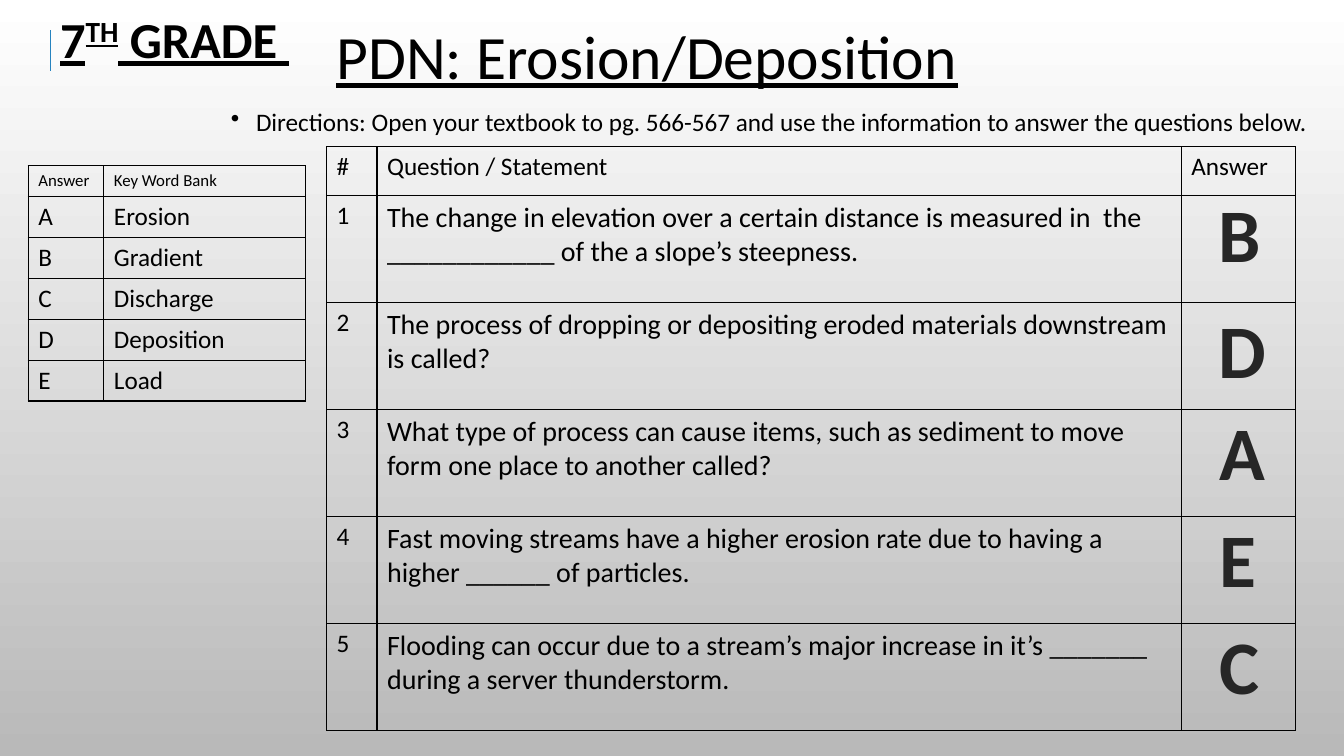
from lxml import etree
from pptx import Presentation
from pptx.dml.color import RGBColor
from pptx.enum.shapes import MSO_CONNECTOR
from pptx.enum.text import MSO_ANCHOR, MSO_AUTO_SIZE, PP_ALIGN
from pptx.oxml.ns import qn
from pptx.util import Pt

STRAIGHT = MSO_CONNECTOR.STRAIGHT
TOP, MIDDLE = MSO_ANCHOR.TOP, MSO_ANCHOR.MIDDLE
LEFT, CENTER, RIGHT = PP_ALIGN.LEFT, PP_ALIGN.CENTER, PP_ALIGN.RIGHT
COLORS = {"text": "000000", "answer": "262626", "white": "FFFFFF",
          "shade": "B9B9B9", "accent": "2683BF"}

prs = Presentation()
prs.slide_width, prs.slide_height = Pt(960), Pt(540)
s = prs.slides.add_slide(prs.slide_layouts[6])

# Background gradient, white at the top
fill = s.background.fill
fill.gradient()
fill.gradient_angle = 270
for stop, name, position in zip(fill.gradient_stops, ("white", "shade"), (0, 1)):
    stop.color.rgb = RGBColor.from_string(COLORS[name])
    stop.position = position


def add_run(p, text, color="text", **formats):
    r = p.add_run()
    r.text = text
    r.font.color.rgb = RGBColor.from_string(COLORS[color])
    for name, value in {"name": "Calibri", **formats}.items():
        setattr(r.font, name, value)
    return r


def add_line(parent, tag, color, width):
    ln = etree.SubElement(parent, qn(tag), w=str(Pt(width)))
    solid = etree.SubElement(ln, qn("a:solidFill"))
    etree.SubElement(solid, qn("a:srgbClr"), val=COLORS[color])
    return ln


# Heading, title and directions
paragraphs = []
for box, anchor, align in [
    ((11.5, -27.4, 226, 114.5), MIDDLE, CENTER),
    ((233.3, 5, 720, 75), MIDDLE, LEFT),
    ((0, 74.9, 941, 29.5), TOP, RIGHT),
]:
    tf = s.shapes.add_textbox(*map(Pt, box)).text_frame
    tf.word_wrap = True
    tf.vertical_anchor = anchor
    p = tf.paragraphs[0]
    p.alignment = align
    p.line_spacing = 0.9
    paragraphs.append(p)
heading, title, directions = paragraphs

for text, baseline in [("7", 0), ("TH", 30000), (" GRADE ", 0)]:
    r = add_run(heading, text, size=Pt(36), bold=True, underline=True)
    r.font._element.set("baseline", str(baseline))
add_run(title, "PDN: Erosion/Deposition", size=Pt(44), underline=True)

pPr = directions._p.get_or_add_pPr()
pPr.set("marL", str(Pt(18)))
pPr.set("indent", str(-Pt(18)))
etree.SubElement(pPr, qn("a:buChar"), char="•")
add_run(directions, "Directions: Open your textbook to pg. 566-567 and use the "
        "information to answer the questions below.", size=Pt(18))

# Word bank and question tables
words = ["Erosion", "Gradient", "Discharge", "Deposition", "Load"]
questions = [
    "The change in elevation over a certain distance is measured in  the "
    "____________ of the a slope’s steepness.",
    "The process of dropping or depositing eroded materials downstream is called?",
    "What type of process can cause items, such as sediment to move form one "
    "place to another called?",
    "Fast moving streams have a higher erosion rate due to having a higher "
    "______ of particles.",
    "Flooding can occur due to a stream’s major increase in it’s _______ during "
    "a server thunderstorm.",
]
bank_rows = [("Answer", "Key Word Bank"), *zip("ABCDE", words)]
question_rows = [("#", "Question / Statement", "Answer"),
                 *((str(n), q, "") for n, q in enumerate(questions, 1))]

# rows, left, top, column widths, header and body heights, header and body sizes
for rows, left, top, widths, heights, head_size, body_sizes in [
    (bank_rows, 20.2, 118.5, (54, 144), (22, 29.2), 12, (18, 18)),
    (question_rows, 233.3, 104.9, (36, 574.5, 81.4), (34.6, 76.45), 18, (18, 20, 18)),
]:
    head_height, body_height = heights
    total = head_height + body_height * (len(rows) - 1)
    table = s.shapes.add_table(len(rows), len(widths), Pt(left), Pt(top),
                               Pt(sum(widths)), Pt(total)).table
    table.first_row = table.horz_banding = False
    for column, width in zip(table.columns, widths):
        column.width = Pt(width)
    for i, texts in enumerate(rows):
        table.rows[i].height = Pt(body_height if i else head_height)
        for j, text in enumerate(texts):
            cell = table.cell(i, j)
            tcPr = cell._tc.get_or_add_tcPr()
            for side in "LRTB":
                add_line(tcPr, f"a:ln{side}", "text", 1)
            cell.fill.background()
            if text:
                size = body_sizes[j] if i else head_size
                add_run(cell.text_frame.paragraphs[0], text, size=Pt(size))

# Accent line beside the heading
rule = s.shapes.add_connector(STRAIGHT, Pt(36), Pt(50.4), Pt(36), Pt(21.6))
rule.line.color.rgb = RGBColor.from_string(COLORS["accent"])
rule.line.width = Pt(0.75)
etree.SubElement(rule._element.spPr, qn("a:effectLst"))

# Answer letters
for letter, left, top, width in [
    ("B", 862.6, 129.6, 45.4), ("D", 862.6, 213.1, 49), ("A", 864, 285.8, 47.5),
    ("E", 864, 362.2, 41), ("C", 864, 438.5, 43.2),
]:
    tf = s.shapes.add_textbox(Pt(left), Pt(top), Pt(width), Pt(72.7)).text_frame
    tf.word_wrap = False
    tf.auto_size = MSO_AUTO_SIZE.SHAPE_TO_FIT_TEXT
    p = tf.paragraphs[0]
    p.alignment = CENTER
    r = add_run(p, letter, "answer", size=Pt(54), bold=True)
    rPr = r.font._element
    rPr.insert(0, add_line(rPr, "a:ln", "white", 1.06))

prs.save("out.pptx")
